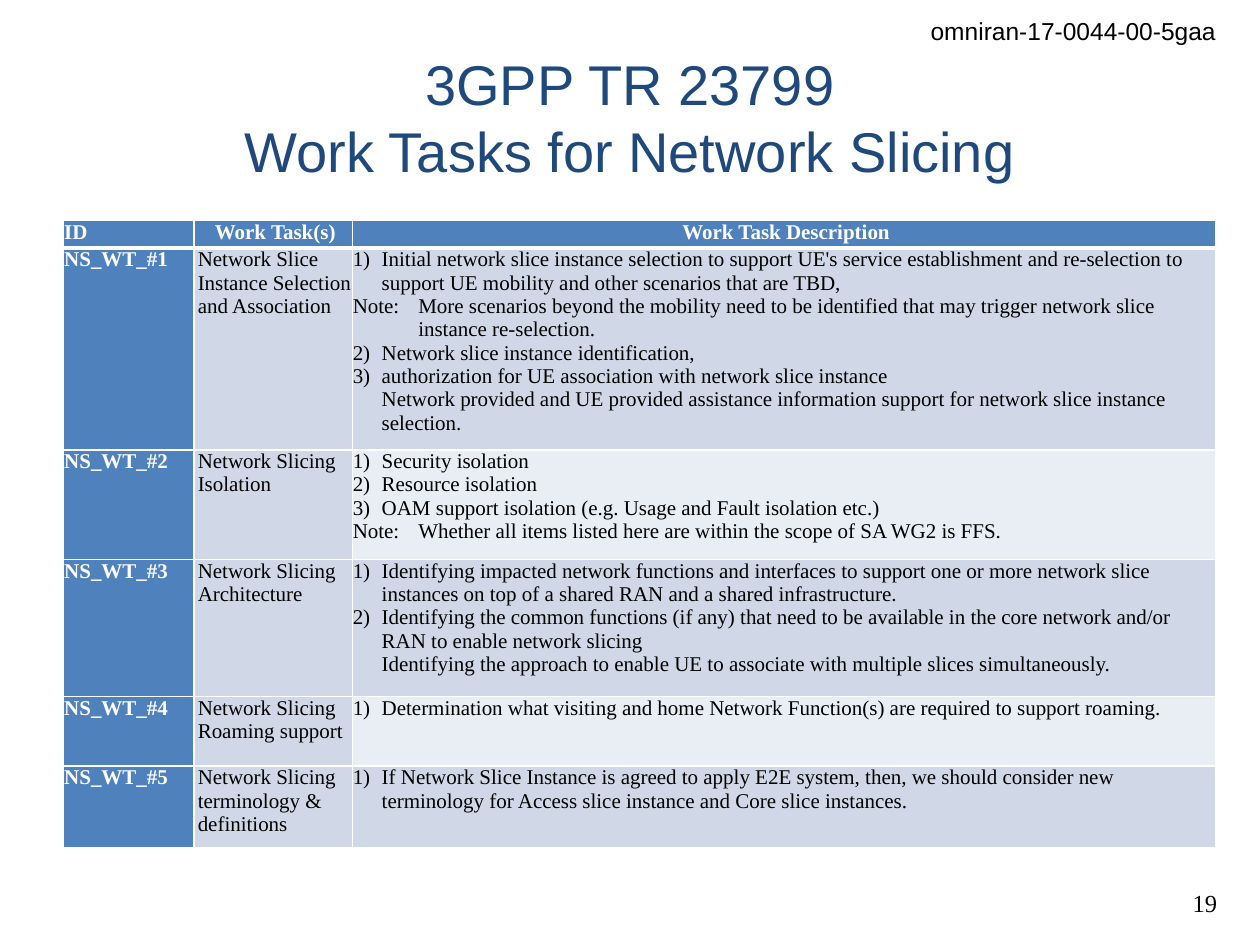
"""Build the slide that lists the work tasks for network slicing."""
from dataclasses import dataclass

from lxml.etree import SubElement
from pptx import Presentation
from pptx.dml.color import RGBColor
from pptx.enum.text import MSO_ANCHOR, PP_ALIGN
from pptx.oxml.ns import qn
from pptx.util import Inches, Pt

COLORS = {"white": "FFFFFF", "black": "000000", "navy": "1F497D",
          "blue": "4F81BD", "band": "D0D8E8", "pale": "E9EDF4"}
SANS, SERIF = "Arial", "Times New Roman"
PAGE_COLUMNS, PAGE_ROWS = 100, 75
TABLE_COLUMNS = (10.4, 12.6, 68.5)
HEADER_ROWS = 2.2
ID_INDENT, TASK_INDENT, STEP_INDENT, NOTE_INDENT = 0.1, 0.3, 2.3, 5.2


@dataclass(frozen=True)
class Area:
    """A rectangle in grid columns and rows."""
    left: float
    top: float
    width: float
    height: float


@dataclass(frozen=True)
class Corner:
    """A short right-aligned text in a corner of the page."""
    text: str
    font: str
    area: Area


@dataclass(frozen=True)
class WorkTask:
    """One body row of the table; a vertical tab in a line breaks it."""
    name: str
    rows: float
    lines: tuple[str, ...]


CORNERS = (
    Corner("omniran-17-0044-00-5gaa", SANS, Area(72, 0.8, 25.5, 3.4)),
    Corner("19", SERIF, Area(93.3, 70, 4.3, 3.4)),
)
HEADINGS = ("ID", "Work Task(s)", "Work Task Description")
TASKS = (
    WorkTask("Network Slice Instance Selection and Association", 15.3, (
        "1)\tInitial network slice instance selection to support UE's service establishment "
        "and re-selection to support UE mobility and other scenarios that are TBD,",
        "Note:\tMore scenarios beyond the mobility need to be identified that may trigger "
        "network slice instance re-selection.",
        "2)\tNetwork slice instance identification,",
        "3)\tauthorization for UE association with network slice instance\v"
        "Network provided and UE provided assistance information support for network slice "
        "instance selection.")),
    WorkTask("Network Slicing Isolation", 8.7, (
        "1)\tSecurity isolation",
        "2)\tResource isolation",
        "3)\tOAM support isolation (e.g. Usage and Fault isolation etc.)",
        "Note:\tWhether all items listed here are within the scope of SA WG2 is FFS.")),
    WorkTask("Network Slicing Architecture", 10.9, (
        "1)\tIdentifying impacted network functions and interfaces to support one or more "
        "network slice instances on top of a shared RAN and a shared infrastructure.",
        "2)\tIdentifying the common functions (if any) that need to be available in the core "
        "network and/or RAN to enable network slicing\v"
        "Identifying the approach to enable UE to associate with multiple slices "
        "simultaneously.")),
    WorkTask("Network Slicing Roaming support", 5.5, (
        "1)\tDetermination what visiting and home Network Function(s) are required to support "
        "roaming.",)),
    WorkTask("Network Slicing terminology & definitions", 6.5, (
        "1)\tIf Network Slice Instance is agreed to apply E2E system, then, we should consider "
        "new terminology for Access slice instance and Core slice instances.",)),
)


def grid(count: float) -> int:
    """Return the length of a number of grid columns or rows."""
    return Inches(count / 10)


def bounds(area: Area) -> tuple[int, ...]:
    """Return left, top, width and height of an area."""
    return tuple(map(grid, (area.left, area.top, area.width, area.height)))


def write(para, text: str, font: str, size: float, color: str,
          align=PP_ALIGN.LEFT, bold: bool = False) -> None:
    """Write one formatted paragraph."""
    para.text = text
    para.alignment = align
    para.font.name, para.font.size, para.font.bold = font, Pt(size), bold
    para.font.color.rgb = RGBColor.from_string(COLORS[color])


def indent(para, margin: float, hanging: bool = False) -> None:
    """Indent a paragraph, with its first line at the edge if hanging."""
    properties = para._p.get_or_add_pPr()
    properties.set("marL", str(grid(margin)))
    properties.set("indent", str(-grid(margin) if hanging else 0))


def style_cell(cell, fill: str, top: float = 1, bottom: float = 1) -> None:
    """Give a cell white borders, a fill and no margins."""
    cell.margin_left = cell.margin_right = cell.margin_top = cell.margin_bottom = 0
    properties = cell._tc.get_or_add_tcPr()
    for side, width in (("L", 1), ("R", 1), ("T", top), ("B", bottom)):
        line = SubElement(properties, qn(f"a:ln{side}"), w=str(Pt(width)))
        solid = SubElement(line, qn("a:solidFill"))
        SubElement(solid, qn("a:srgbClr"), val=COLORS["white"])
    cell.fill.solid()
    cell.fill.fore_color.rgb = RGBColor.from_string(COLORS[fill])


def draw_corner(page, corner: Corner) -> None:
    """Draw a corner text."""
    box = page.shapes.add_textbox(*bounds(corner.area))
    box.text_frame.word_wrap = False
    write(box.text_frame.paragraphs[0], corner.text, corner.font, 14, "black", PP_ALIGN.RIGHT)


def draw_title(page, text: str, area: Area) -> None:
    """Place and format the title."""
    title = page.shapes.title
    title.left, title.top, title.width, title.height = bounds(area)
    title.text_frame.vertical_anchor = MSO_ANCHOR.MIDDLE
    write(title.text_frame.paragraphs[0], text, SANS, 32, "navy", PP_ALIGN.CENTER)


def fill_cell(cell, text: str, margin: float, color: str, align=PP_ALIGN.LEFT,
              bold: bool = False) -> None:
    """Write a cell of one paragraph."""
    para = cell.text_frame.paragraphs[0]
    write(para, text, SERIF, 12, color, align, bold)
    indent(para, margin)


def fill_description(cell, lines: tuple[str, ...]) -> None:
    """Write the steps and notes of a task with hanging indents."""
    frame = cell.text_frame
    for index, line in enumerate(lines):
        para = frame.add_paragraph() if index else frame.paragraphs[0]
        write(para, line, SERIF, 12, "black")
        indent(para, NOTE_INDENT if line.startswith("Note") else STEP_INDENT, hanging=True)


def draw_table(page, left: float, top: float) -> None:
    """Draw the table of work tasks."""
    heights = (HEADER_ROWS, *(task.rows for task in TASKS))
    area = Area(left, top, sum(TABLE_COLUMNS), sum(heights))
    table = page.shapes.add_table(len(heights), len(TABLE_COLUMNS), *bounds(area)).table
    for column, width in zip(table.columns, TABLE_COLUMNS):
        column.width = grid(width)
    for row, height in zip(table.rows, heights):
        row.height = grid(height)

    for index, heading in enumerate(HEADINGS):
        cell = table.cell(0, index)
        style_cell(cell, "blue", bottom=3)
        fill_cell(cell, heading, TASK_INDENT if index else ID_INDENT, "white",
                  PP_ALIGN.CENTER if index else PP_ALIGN.LEFT, bold=True)

    for number, task in enumerate(TASKS, start=1):
        cells = [table.cell(number, index) for index in range(len(HEADINGS))]
        for cell, fill in zip(cells, ("blue", "band", "band" if number % 2 else "pale")):
            style_cell(cell, fill, top=3 if number == 1 else 1)
        fill_cell(cells[0], f"NS_WT_#{number}", ID_INDENT, "white", bold=True)
        fill_cell(cells[1], task.name, TASK_INDENT, "black")
        fill_description(cells[2], task.lines)


def main() -> None:
    """Build and save the deck."""
    deck = Presentation()
    deck.slide_width, deck.slide_height = grid(PAGE_COLUMNS), grid(PAGE_ROWS)
    page = deck.slides.add_slide(deck.slide_layouts[5])
    for corner in CORNERS:
        draw_corner(page, corner)
    draw_title(page, "3GPP TR 23799\vWork Tasks for Network Slicing", Area(5, 3, 90, 12.5))
    draw_table(page, 5, 17.5)
    deck.save("out.pptx")


if __name__ == "__main__":
    main()
